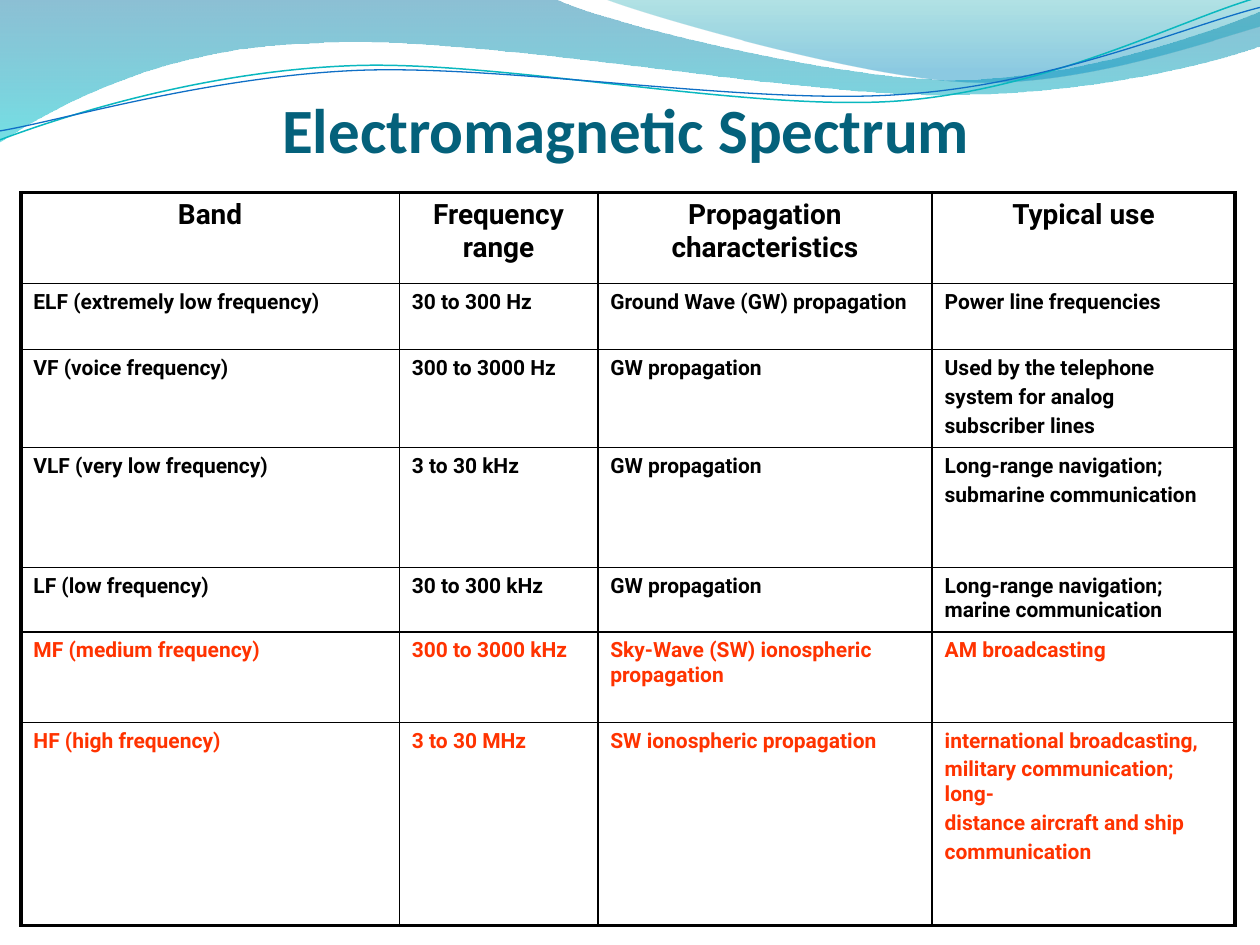
from lxml import etree
from pptx import Presentation
from pptx.dml.color import RGBColor
from pptx.enum.text import MSO_AUTO_SIZE, PP_ALIGN
from pptx.oxml.ns import qn
from pptx.util import Cm, Pt

CENTER, LEFT = PP_ALIGN.CENTER, PP_ALIGN.LEFT
FIT_SHAPE = MSO_AUTO_SIZE.SHAPE_TO_FIT_TEXT
BLACK, RED = "000000", "FF3300"
LINE_ROTATION = 357.3

# Content: a tuple inside a cell holds several paragraphs
TITLE = "Electromagnetic Spectrum"
HEADER = ["Band", "Frequency range", "Propagation characteristics", "Typical use"]
BANDS = [
    (BLACK, ["ELF (extremely low frequency)", "30 to 300 Hz",
             "Ground Wave (GW) propagation", "Power line frequencies"]),
    (BLACK, ["VF (voice frequency)", "300 to 3000 Hz", "GW propagation",
             ("Used by the telephone", "system for analog", "subscriber lines")]),
    (BLACK, ["VLF (very low frequency)", "3 to 30 kHz", "GW propagation",
             ("Long-range navigation;", "submarine communication")]),
    (BLACK, ["LF (low frequency)", "30 to 300 kHz", "GW propagation",
             "Long-range navigation; marine communication"]),
    (RED, ["MF (medium frequency)", "300 to 3000 kHz",
           "Sky-Wave (SW) ionospheric propagation", "AM broadcasting"]),
    (RED, ["HF (high frequency)", "3 to 30 MHz", "SW ionospheric propagation",
           ("international broadcasting,", "military communication; long-",
            "distance aircraft and ship", "communication")]),
]
COLUMN_WIDTHS = [7.63, 4, 6.74, 6.11]
ROW_HEIGHTS = [1.83, 1.34, 1.97, 2.42, 1.3, 1.82, 4.1]

# Waves, in cm: a pair is a straight step, a six-tuple is a Bezier curve
WAVES = [
    ([(0, 0), (11.18, -0.03), (12.09, 0.43, 16.87, 1.6, 19.25, 1.6),
      (21.67, 1.6, 24.33, 0.66, 25.4, 0.23), (25.43, 0.91),
      (24.97, 1.12, 22.1, 1.93, 18.95, 1.91), (15.8, 1.91, 9.7, 0.71, 6.53, 0.86),
      (3.28, 0.91, 1.17, 2.11, -0.03, 2.87), (0, 0)],
     [(0, "0074A1", 45), (1, "00C6CF", 55)]),
    ([(12.17, -0.03), (12.93, 0.28, 17.32, 1.57, 19.53, 1.65),
      (21.74, 1.75, 24.41, 0.81, 25.4, 0.53), (25.4, 0), (12.17, -0.03)],
     [(0, "00A1A9", 30), (0.8, "008BBF", 45)]),
]
# Thin lines, before rotation
WAVE_LINES = [
    ([(-0.05, 2.22), (1.19, 1.82, 4.02, 1.04, 7.05, 1.06),
      (10.05, 1.07, 15.02, 2.37, 18.08, 2.29), (21.13, 2.2, 23.86, 0.91, 25.41, 0.55)],
     "0AB8BF", 0.85),
    ([(-0.04, 2.04), (1.16, 1.9, 4.17, 1.15, 7.2, 1.16),
      (10.25, 1.18, 15.13, 2.25, 18.19, 2.16), (21.21, 2.1, 23.93, 1.06, 25.45, 0.75)],
     "0F6FC6", 0.75),
]


def color(value):
    return RGBColor.from_string(value)


def add_wave(slide, steps, close):
    """Build the outline through all points, then merge triples into curves."""
    points = [(Cm(step[i]), Cm(step[i + 1]))
              for step in steps for i in range(0, len(step), 2)]
    builder = slide.shapes.build_freeform(*points[0])
    builder.add_line_segments(points[1:], close=close)
    shape = builder.convert_to_shape()
    shape.shadow.inherit = False
    segments = iter(list(shape._element.iter(qn("a:lnTo"))))
    for step in steps[1:]:
        segment = next(segments)
        if len(step) == 6:
            segment.tag = qn("a:cubicBezTo")
            for _ in range(2):
                extra = next(segments)
                segment.append(extra[0])
                extra.getparent().remove(extra)
    return shape


def add_paragraphs(frame, texts, size, font_name, font_color, alignment, before=0):
    for i, text in enumerate(texts):
        paragraph = frame.add_paragraph() if i else frame.paragraphs[0]
        paragraph.alignment = alignment
        if before:
            spacing = etree.SubElement(paragraph._p.get_or_add_pPr(), qn("a:spcBef"))
            etree.SubElement(spacing, qn("a:spcPct"), val=str(before * 1000))
        run = paragraph.add_run()
        run.text = text
        font = run.font
        font.size, font.name, font.bold = Pt(size), font_name, True
        font.color.rgb = color(font_color)


def set_borders(cell, widths):
    properties = cell._tc.get_or_add_tcPr()
    for side, width in widths.items():
        line = etree.SubElement(properties, qn("a:ln" + side), w=str(Pt(width)))
        fill = etree.SubElement(line, qn("a:solidFill"))
        etree.SubElement(fill, qn("a:srgbClr"), val=BLACK)


presentation = Presentation()
presentation.slide_width, presentation.slide_height = Cm(25.4), Cm(19.05)
slide = presentation.slides.add_slide(presentation.slide_layouts[6])

# Waves along the top
for steps, stops in WAVES:
    shape = add_wave(slide, steps, True)
    shape.line.fill.background()
    shape.fill.gradient()
    shape.fill.gradient_angle = 270
    for stop, (position, value, _) in zip(shape.fill.gradient_stops, stops):
        stop.position = position
        stop.color.rgb = color(value)
    colors = shape._element.spPr.iter(qn("a:srgbClr"))
    for element, (_, _, opacity) in zip(colors, stops):
        etree.SubElement(element, qn("a:alpha"), val=str(opacity * 1000))

for steps, value, width in WAVE_LINES:
    shape = add_wave(slide, steps, False)
    shape.rotation = LINE_ROTATION
    shape.fill.background()
    shape.line.color.rgb = color(value)
    shape.line.width = Pt(width)

# Title
title = slide.shapes.add_textbox(Cm(0), Cm(1.7), Cm(25.24), Cm(1.8))
title.text_frame.word_wrap = True
title.text_frame.auto_size = FIT_SHAPE
add_paragraphs(title.text_frame, [TITLE], 36, "Calibri", "04617B", CENTER)

# Table of bands, with a heavy outer frame
rows = [(BLACK, HEADER)] + BANDS
last_row, last_column = len(rows) - 1, len(HEADER) - 1
table = slide.shapes.add_table(len(rows), len(HEADER), Cm(0.42), Cm(3.88),
                               Cm(sum(COLUMN_WIDTHS)), Cm(sum(ROW_HEIGHTS))).table
table.first_row = table.horz_banding = False
for column, width in zip(table.columns, COLUMN_WIDTHS):
    column.width = Cm(width)
for r, (text_color, texts) in enumerate(rows):
    table.rows[r].height = Cm(ROW_HEIGHTS[r])
    size, alignment = (12, LEFT) if r else (16, CENTER)
    for c, text in enumerate(texts):
        cell = table.cell(r, c)
        outer = {"L": c == 0, "R": c == last_column, "T": r == 0, "B": r == last_row}
        set_borders(cell, {side: 2.25 if edge else 1 for side, edge in outer.items()})
        cell.fill.background()
        paragraphs = [text] if isinstance(text, str) else text
        add_paragraphs(cell.text_frame, paragraphs, size, "Roboto", text_color,
                       alignment, before=20)

presentation.save("out.pptx")
